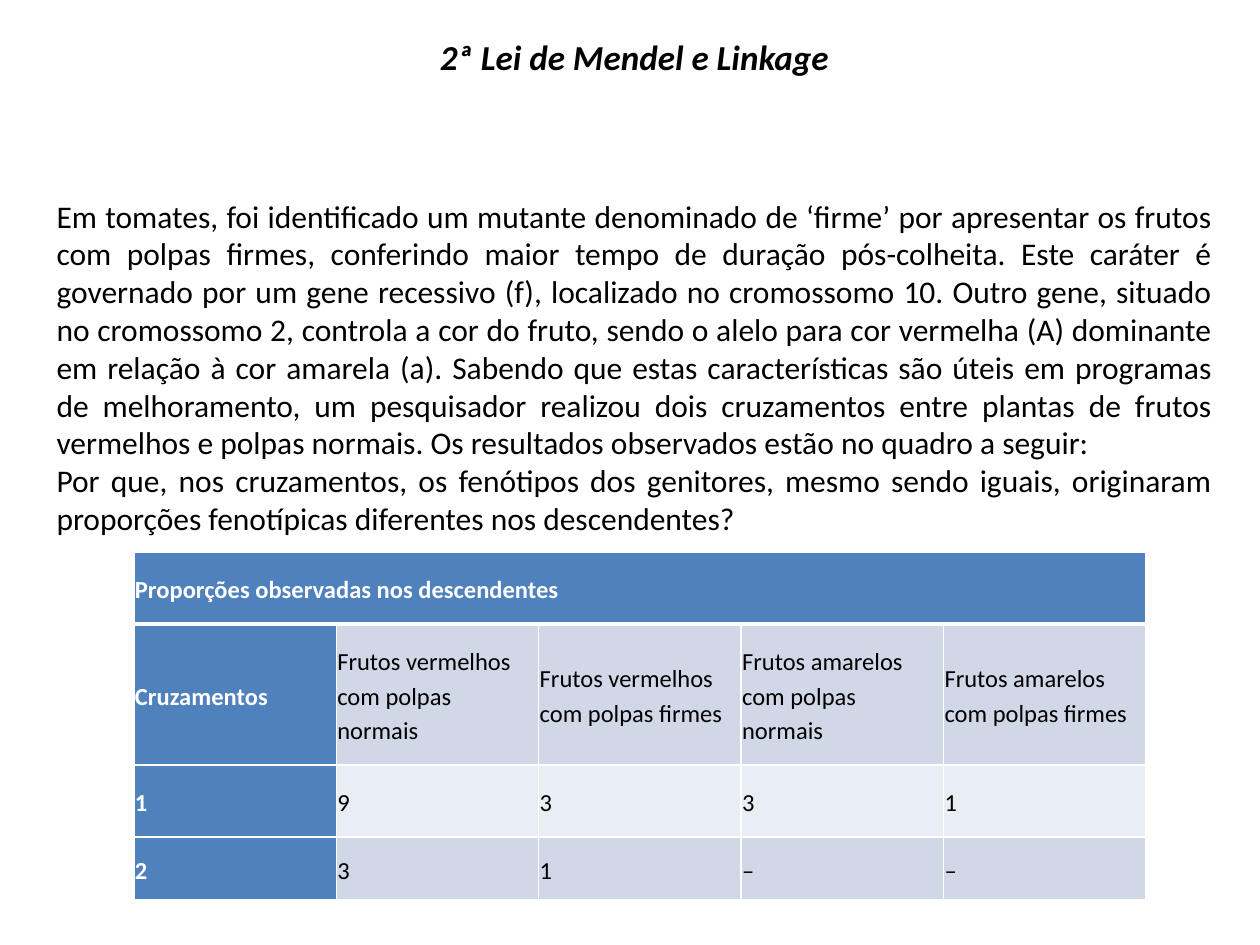
from lxml import etree
from pptx import Presentation
from pptx.dml.color import RGBColor as RGB
from pptx.enum.text import MSO_ANCHOR as Anchor, PP_ALIGN as Align
from pptx.oxml.ns import qn
from pptx.util import Cm, Pt

HUES = {"ink": "000000", "white": "FFFFFF", "blue": "4F81BD",
        "mid": "D0D8E8", "pale": "E9EDF4"}


def style(par, size, hue="ink", bold=False, slant=False):
    for run in par.runs:
        font = run.font
        font.name, font.size = "Calibri", Pt(size)
        font.bold, font.italic = bold, slant
        font.color.rgb = RGB.from_string(HUES[hue])


def edge(cell, side, width):
    line = etree.SubElement(cell._tc.get_or_add_tcPr(), qn("a:ln" + side),
                            w=str(Pt(width)))
    fill = etree.SubElement(line, qn("a:solidFill"))
    etree.SubElement(fill, qn("a:srgbClr"), val=HUES["white"])


deck = Presentation()
deck.slide_width, deck.slide_height = Cm(25.4), Cm(19.05)
slide = deck.slides.add_slide(deck.slide_layouts[6])

# Table of observed ratios
rows = [
    ["Proporções observadas nos descendentes", "", "", "", ""],
    ["Cruzamentos", "Frutos vermelhos com polpas normais",
     "Frutos vermelhos com polpas firmes",
     "Frutos amarelos com polpas normais",
     "Frutos amarelos com polpas firmes"],
    ["1", "9", "3", "3", "1"],
    ["2", "3", "1", "–", "–"],
]
highs = [1.45, 2.84, 1.45, 1.27]
table = slide.shapes.add_table(4, 5, Cm(2.7), Cm(11.13),
                               Cm(20.4), Cm(sum(highs))).table
for col in table.columns:
    col.width = Cm(4.08)
for r, (row, high) in enumerate(zip(rows, highs)):
    table.rows[r].height = Cm(high)
    for c, text in enumerate(row):
        cell = table.cell(r, c)
        head = r == 0 or c == 0
        cell.margin_left = cell.margin_top = cell.margin_bottom = Cm(0.02)
        cell.margin_right = Cm(0.2 if r == 1 else 0.02)
        cell.vertical_anchor = Anchor.MIDDLE
        # A thick rule parts the banner from the rows below
        for side in "LRTB":
            thick = (r, side) in [(0, "B"), (1, "T")]
            edge(cell, side, 3 if thick else 1)
        hue = "blue" if head else "pale" if r == 2 else "mid"
        cell.fill.solid()
        cell.fill.fore_color.rgb = RGB.from_string(HUES[hue])
        if text:
            par = cell.text_frame.paragraphs[0]
            par.text = text
            par.line_spacing = 1.15
            style(par, 14, "white" if head else "ink", bold=head)
table.cell(0, 0).merge(table.cell(0, 4))

# Title and question
frame = slide.shapes.add_textbox(Cm(0.89), Cm(0.52),
                                 Cm(23.8), Cm(10.5)).text_frame
frame.word_wrap = True
frame.vertical_anchor = Anchor.MIDDLE
title = frame.paragraphs[0]
title.text = "2ª Lei de Mendel e Linkage"
title.alignment = Align.CENTER
title.space_after = Pt(68)
style(title, 20, bold=True, slant=True)

body = [
    "Em tomates, foi identificado um mutante denominado de ‘firme’ por "
    "apresentar os frutos com polpas firmes, conferindo maior tempo de "
    "duração pós-colheita. Este caráter é governado por um gene recessivo "
    "(f), localizado no cromossomo 10. Outro gene, situado no cromossomo 2, "
    "controla a cor do fruto, sendo o alelo para cor vermelha (A) dominante "
    "em relação à cor amarela (a). Sabendo que estas características são "
    "úteis em programas de melhoramento, um pesquisador realizou dois "
    "cruzamentos entre plantas de frutos vermelhos e polpas normais. Os "
    "resultados observados estão no quadro a seguir:",
    "Por que, nos cruzamentos, os fenótipos dos genitores, mesmo sendo "
    "iguais, originaram proporções fenotípicas diferentes nos descendentes?",
]
for text in body:
    par = frame.add_paragraph()
    par.text = text
    par.alignment = Align.JUSTIFY
    style(par, 18)

deck.save("out.pptx")
